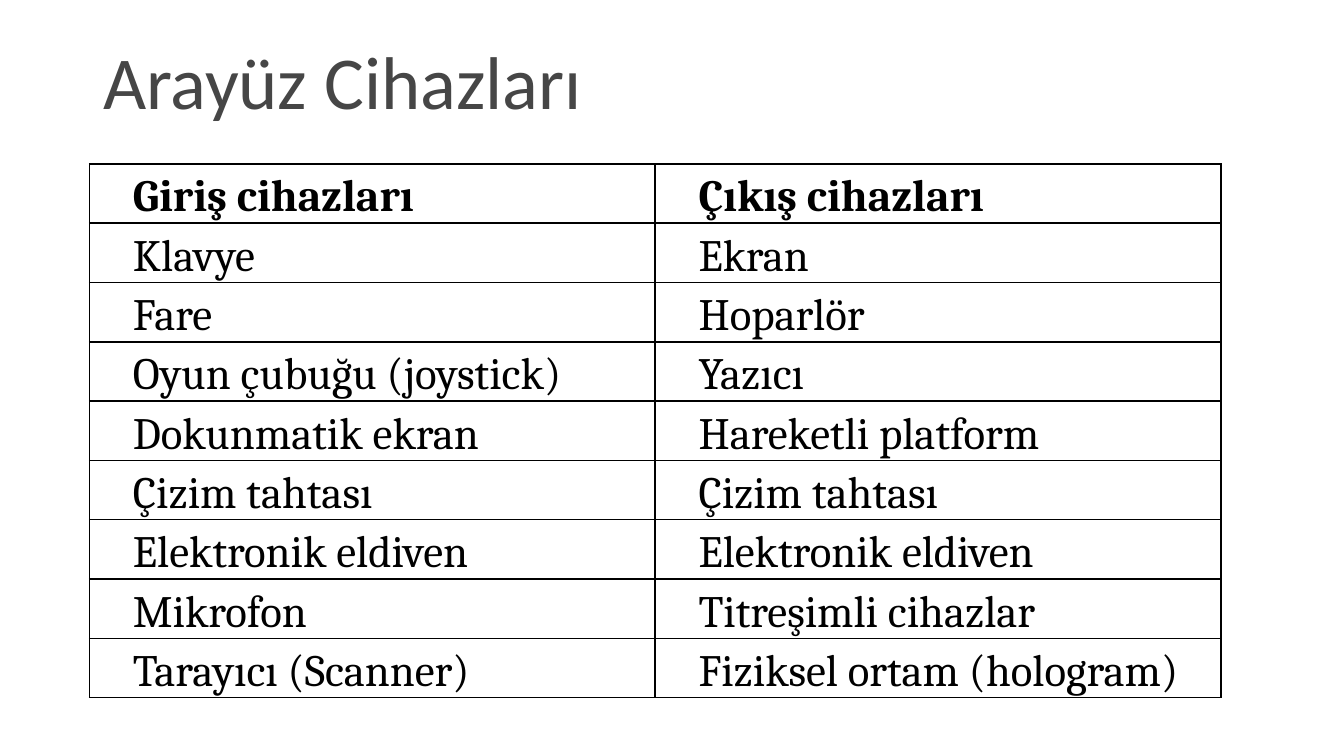
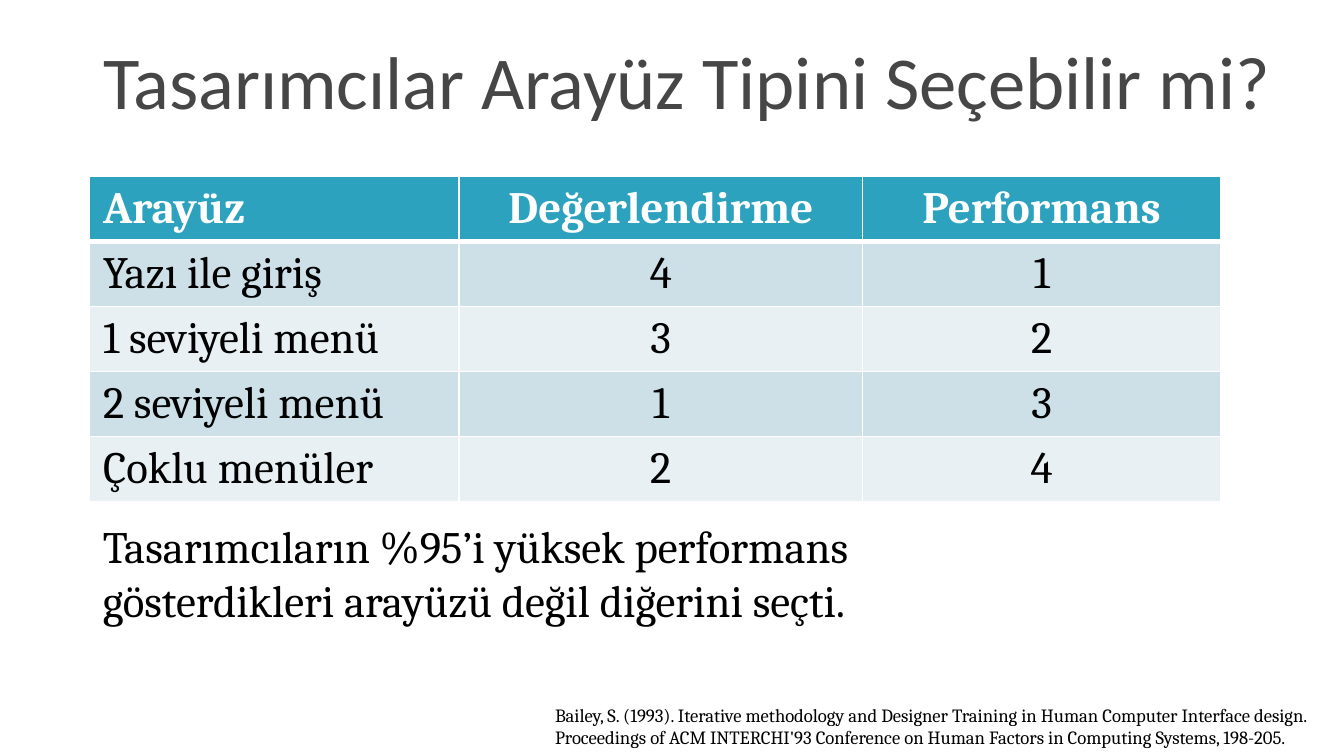
from lxml.etree import SubElement
from pptx import Presentation
from pptx.dml.color import RGBColor
from pptx.enum.text import MSO_ANCHOR, MSO_AUTO_SIZE, PP_ALIGN
from pptx.oxml.ns import qn
from pptx.util import Pt

PX = 9525  # 96 px to the inch
LEFT = 64
COLORS = {
    "title": "464646",
    "text": "000000",
    "white": "FFFFFF",
    "header": "2DA2BF",
    "band_dark": "CDE0E8",
    "band_light": "E8F0F4",
}


def write(tf, text, size=24, font="Cambria", color="text", bold=False,
          align=PP_ALIGN.LEFT, spacing=None, indent=0):
    """Fill a text frame, one paragraph for each line of text."""
    for i, line in enumerate(text.split("\n")):
        p = tf.add_paragraph() if i else tf.paragraphs[0]
        p.alignment = align
        if spacing:
            p.line_spacing = spacing
        if indent:
            pPr = p._p.get_or_add_pPr()
            pPr.set("marL", "0")
            pPr.set("indent", str(indent * PX))
        r = p.add_run()
        r.text = line
        r.font.size = Pt(size)
        r.font.name = font
        r.font.bold = bold
        r.font.color.rgb = RGBColor.from_string(COLORS[color])


def add_grid(s, top, widths, row_height, rows, border):
    """Add a table with 1 pt borders and no banding; return it."""
    table = s.shapes.add_table(len(rows), len(widths), LEFT * PX, top * PX,
                               sum(widths) * PX, len(rows) * row_height * PX).table
    table.first_row = table.horz_banding = False
    for column, width in zip(table.columns, widths):
        column.width = width * PX
    for row in table.rows:
        row.height = row_height * PX
    for cell in table.iter_cells():
        tcPr = cell._tc.get_or_add_tcPr()
        for side in ("lnL", "lnR", "lnT", "lnB"):
            ln = SubElement(tcPr, qn(f"a:{side}"), w=str(Pt(1)))
            fill = SubElement(ln, qn("a:solidFill"))
            SubElement(fill, qn("a:srgbClr"), val=COLORS[border])
    return table


prs = Presentation()
prs.slide_width = 960 * PX
prs.slide_height = 540 * PX

slides = []
for title in ("Arayüz Cihazları", "Tasarımcılar Arayüz Tipini Seçebilir mi?"):
    s = prs.slides.add_slide(prs.slide_layouts[5])
    sp = s.shapes.title
    sp.left, sp.top, sp.width, sp.height = LEFT * PX, 18 * PX, 856 * PX, 78 * PX
    tf = sp.text_frame
    tf.vertical_anchor = MSO_ANCHOR.MIDDLE
    tf.auto_size = MSO_AUTO_SIZE.NONE
    write(tf, title, size=40, font="Calibri", color="title")
    slides.append(s)
devices_slide, choice_slide = slides

# Slide 1: input and output devices
devices = [
    ("Giriş cihazları", "Çıkış cihazları"),
    ("Klavye", "Ekran"),
    ("Fare", "Hoparlör"),
    ("Oyun çubuğu (joystick)", "Yazıcı"),
    ("Dokunmatik ekran", "Hareketli platform"),
    ("Çizim tahtası", "Çizim tahtası"),
    ("Elektronik eldiven", "Elektronik eldiven"),
    ("Mikrofon", "Titreşimli cihazlar"),
    ("Tarayıcı (Scanner)", "Fiziksel ortam (hologram)"),
]
table = add_grid(devices_slide, 117, (404, 404), 40, devices, "text")
for i, row in enumerate(devices):
    for j, text in enumerate(row):
        cell = table.cell(i, j)
        cell.fill.background()
        cell.vertical_anchor = MSO_ANCHOR.MIDDLE
        cell.margin_left = cell.margin_right = 7 * PX
        cell.margin_top = cell.margin_bottom = 0
        write(cell.text_frame, text, bold=i == 0, spacing=1.15, indent=24)

# Slide 2: rating against performance
ratings = [
    ("Arayüz", "Değerlendirme", "Performans"),
    ("Yazı ile giriş", "4", "1"),
    ("1 seviyeli menü", "3", "2"),
    ("2 seviyeli menü", "1", "3"),
    ("Çoklu menüler", "2", "4"),
]
table = add_grid(choice_slide, 126, (264, 288, 256), 39, ratings, "white")
for i, row in enumerate(ratings):
    header = i == 0
    fill = "header" if header else "band_dark" if i % 2 else "band_light"
    for j, text in enumerate(row):
        cell = table.cell(i, j)
        cell.fill.solid()
        cell.fill.fore_color.rgb = RGBColor.from_string(COLORS[fill])
        # The rule under the header is heavier, on both cells that share it
        if i < 2:
            edge = "a:lnB" if header else "a:lnT"
            cell._tc.tcPr.find(qn(edge)).set("w", str(Pt(3)))
        write(cell.text_frame, text, bold=header,
              color="white" if header else "text",
              align=PP_ALIGN.CENTER if j else PP_ALIGN.LEFT)

citation = (
    "Bailey, S. (1993). Iterative methodology and Designer Training in Human Computer Interface design.\n"
    "Proceedings of ACM INTERCHI'93 Conference on Human Factors in Computing Systems, 198-205."
)
finding = "Tasarımcıların %95’i yüksek performans gösterdikleri arayüzü değil diğerini seçti."
for x, y, w, h, text, size, wrap in (
    (387, 498, 573, 42, citation, 10, False),
    (LEFT, 366, 696, 87, finding, 24, True),
):
    tf = choice_slide.shapes.add_textbox(x * PX, y * PX, w * PX, h * PX).text_frame
    tf.word_wrap = wrap
    tf.auto_size = MSO_AUTO_SIZE.SHAPE_TO_FIT_TEXT
    write(tf, text, size=size)

prs.save("out.pptx")
